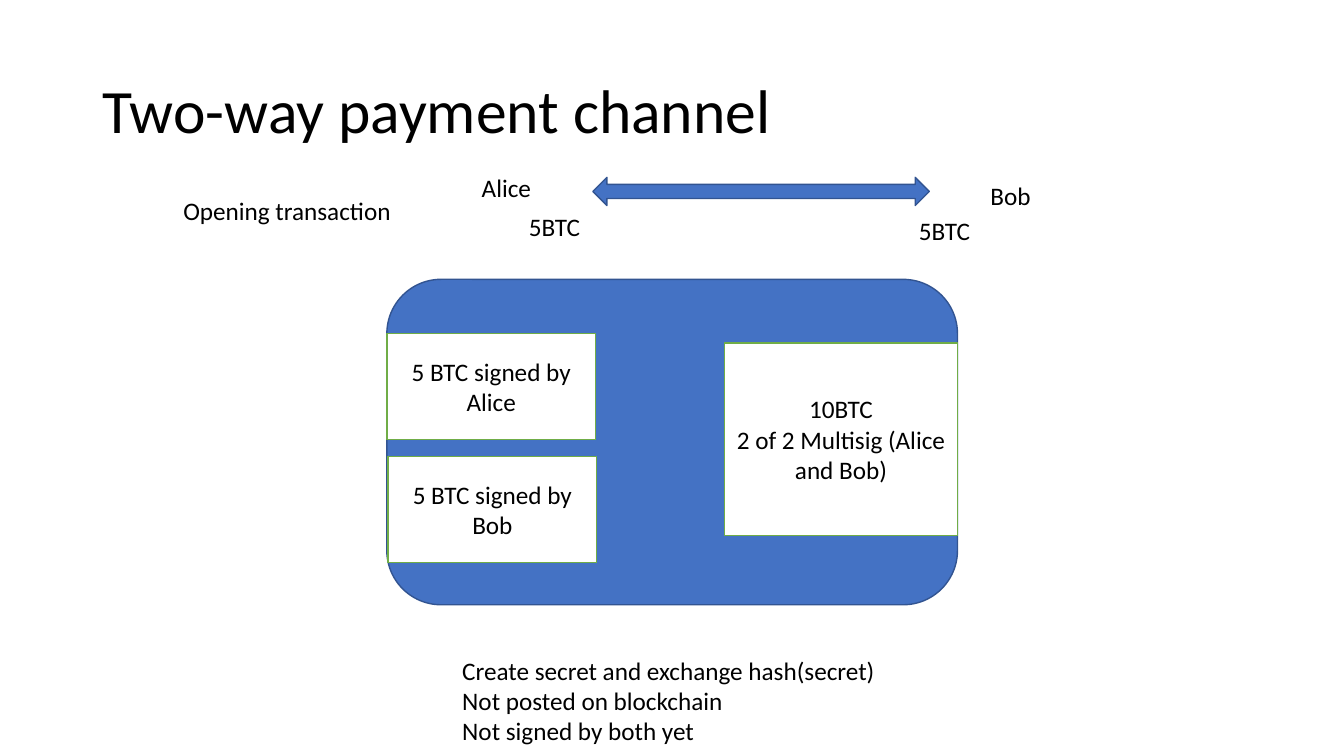
from pptx import Presentation
from pptx import util as u
from pptx.dml.color import RGBColor
from pptx.enum import shapes, text

BLACK = RGBColor(0x00, 0x00, 0x00)
WHITE = RGBColor(0xFF, 0xFF, 0xFF)
BLUE = RGBColor(0x44, 0x72, 0xC4)
NAVY = RGBColor(0x32, 0x54, 0x91)
GREEN = RGBColor(0x70, 0xAD, 0x47)
KIND = shapes.MSO_SHAPE
LEFT = text.PP_ALIGN.LEFT
CENTER = text.PP_ALIGN.CENTER


class Deck:
    """Hold the text style and the current slide."""

    def __init__(self, font, size):
        self.font, self.size = font, size
        self.show = Presentation()
        self.show.slide_width = u.Cm(33.87)
        self.show.slide_height = u.Cm(19.05)
        self.slide = self.show.slides.add_slide(self.show.slide_layouts[5])

    def fill_text(self, frame, lines, align, size=None):
        """Fill a text frame with one paragraph per line."""
        frame.text = "\n".join(lines)
        for para in frame.paragraphs:
            para.alignment = align
            para.font.name = self.font
            para.font.size = u.Pt(size or self.size)
            para.font.color.rgb = BLACK

    def title(self, line, *area):
        """Place and format the title."""
        head = self.slide.shapes.title
        head.left, head.top, head.width, head.height = map(u.Cm, area)
        frame = head.text_frame
        self.fill_text(frame, [line], LEFT, 44)
        frame.paragraphs[0].line_spacing = 0.9
        frame.vertical_anchor = text.MSO_ANCHOR.MIDDLE
        frame.auto_size = text.MSO_AUTO_SIZE.NONE

    def shape(self, kind, fill, line, *area):
        """Draw a filled, outlined shape."""
        form = self.slide.shapes.add_shape(kind, *map(u.Cm, area))
        form.shadow.inherit = False
        form.fill.solid()
        form.fill.fore_color.rgb = fill
        form.line.color.rgb = line
        form.line.width = u.Pt(1)
        return form

    def box(self, lines, *area):
        """Draw a white box with centred text."""
        frame = self.shape(KIND.RECTANGLE, WHITE, GREEN, *area).text_frame
        frame.word_wrap = True
        frame.vertical_anchor = text.MSO_ANCHOR.MIDDLE
        self.fill_text(frame, lines, CENTER)

    def label(self, lines, left, top, width, height=1.02):
        """Add free text that does not wrap."""
        area = map(u.Cm, (left, top, width, height))
        frame = self.slide.shapes.add_textbox(*area).text_frame
        frame.word_wrap = False
        frame.auto_size = text.MSO_AUTO_SIZE.SHAPE_TO_FIT_TEXT
        self.fill_text(frame, lines, LEFT)


def main():
    """Build the payment channel slide."""
    deck = Deck("Calibri", 18)
    deck.title("Two-way payment channel", 2.33, 1.02, 29.21, 3.68)

    deck.shape(KIND.ROUNDED_RECTANGLE, BLUE, NAVY, 9.75, 7.04, 14.38, 8.2)
    deck.box(["5 BTC signed by Alice"], 9.75, 8.41, 5.26, 2.67)
    deck.box(["10BTC", "2 of 2 Multisig (Alice and Bob)"],
             18.26, 8.64, 5.87, 4.85)
    deck.box(["5 BTC signed by Bob"], 9.78, 11.51, 5.26, 2.67)

    deck.label(["Create secret and exchange hash(secret)",
                "Not posted on blockchain",
                "Not signed by both yet"], 11.4, 16.38, 11.05, 2.57)
    deck.label(["Opening transaction"], 4.37, 4.8, 5.79)
    deck.label(["Alice"], 11.89, 4.22, 1.78)
    deck.label(["Bob"], 24.71, 4.42, 1.55)
    deck.label(["5BTC"], 13.08, 5.21, 1.8)
    deck.label(["5BTC"], 22.91, 5.31, 1.8)
    deck.shape(KIND.LEFT_RIGHT_ARROW, BLUE, NAVY, 14.94, 4.47, 8.48, 0.71)

    deck.show.save("out.pptx")


if __name__ == "__main__":
    main()
